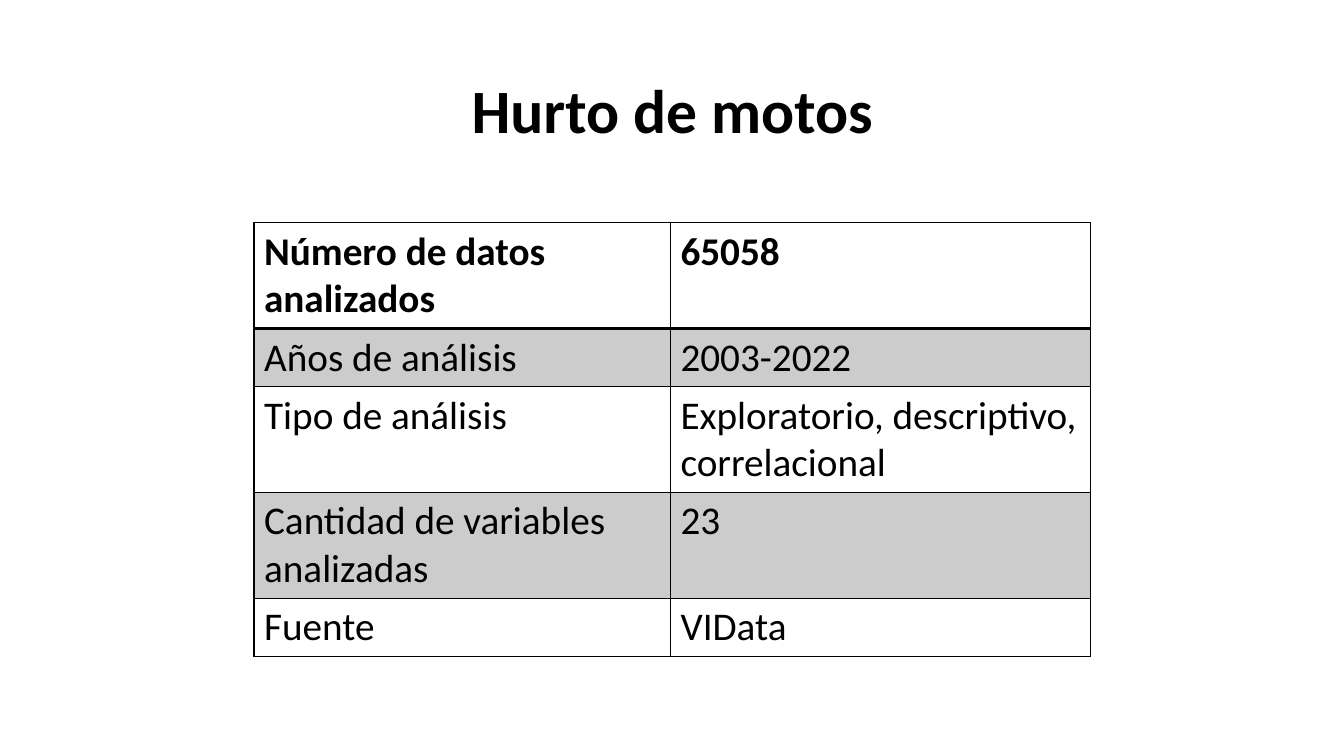
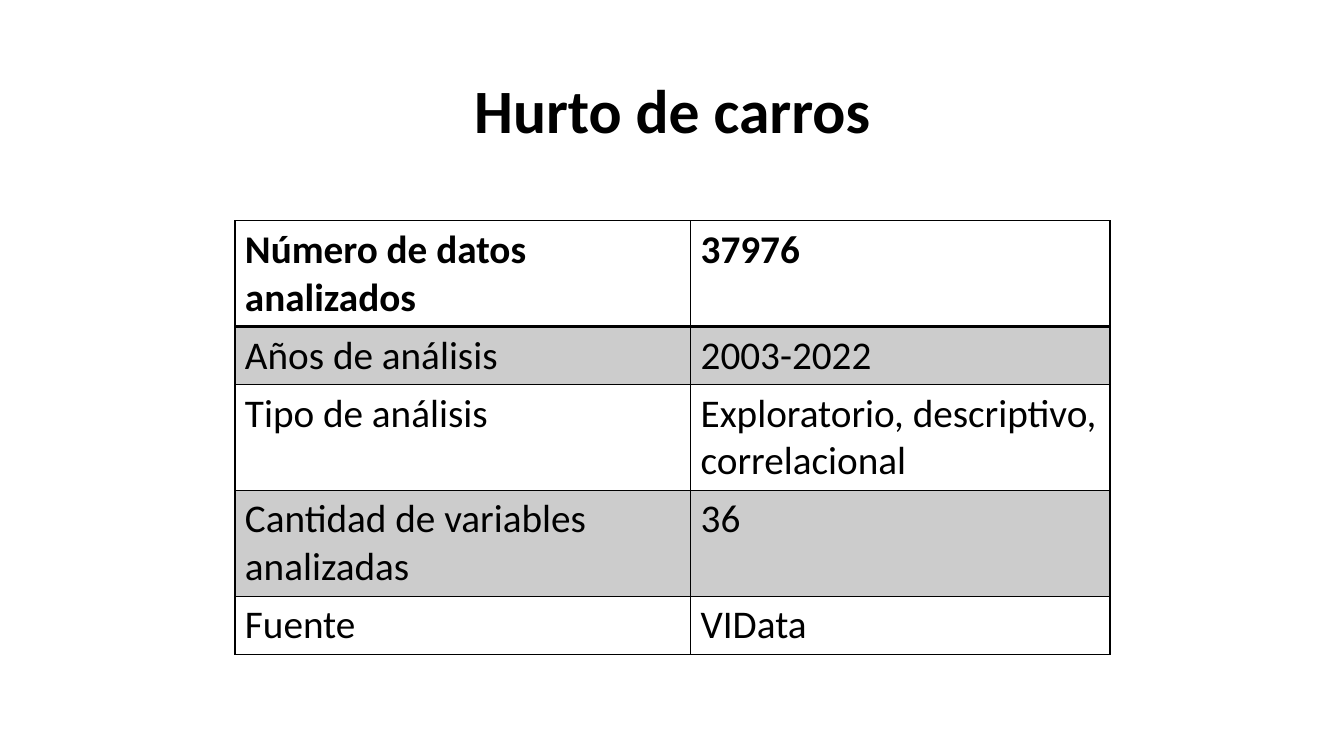
from lxml.etree import SubElement
from pptx import Presentation
from pptx.dml.color import RGBColor
from pptx.enum.text import MSO_ANCHOR, PP_ALIGN
from pptx.oxml.ns import qn
from pptx.util import Inches, Pt

FONT = "Calibri"
BLACK, WHITE, BAND = "000000", "FFFFFF", "CCCCCC"
TITLE_BOX = (0.92, 0.4, 11.5, 1.45)
LINE_HEIGHT, CELL_PADDING = 0.475, 0.1
LABELS = [
    ("Número de datos analizados", 2),
    ("Años de análisis", 1),
    ("Tipo de análisis", 2),
    ("Cantidad de variables analizadas", 2),
    ("Fuente", 1),
]
THEFTS = [
    ("Hurto de motos", "65058", "23", (2.52, 2.21), (4.13, 4.17)),
    ("Hurto de carros", "37976", "36", (2.33, 2.19), (4.52, 4.16)),
]


def color(value):
    return RGBColor.from_string(value)


def style_text(frame, size, bold):
    for para in frame.paragraphs:
        for span in para.runs:
            span.font.name = FONT
            span.font.size = Pt(size)
            span.font.bold = bold
            span.font.color.rgb = color(BLACK)


def set_borders(cell, widths):
    properties = cell._tc.get_or_add_tcPr()
    for side, width in zip("LRTB", widths):
        line = SubElement(properties, qn(f"a:ln{side}"), w=str(Pt(width)))
        fill = SubElement(line, qn("a:solidFill"))
        SubElement(fill, qn("a:srgbClr"), val=BLACK)


def fill_cell(cell, text, row):
    cell.text_frame.text = text
    cell.vertical_anchor = MSO_ANCHOR.TOP
    style_text(cell.text_frame, 28, row == 0)
    set_borders(cell, (1, 1, 2 if row == 1 else 1, 2 if row == 0 else 1))
    cell.fill.solid()
    cell.fill.fore_color.rgb = color(BAND if row % 2 else WHITE)


def add_title(page, text, box):
    title = page.shapes.title
    title.left, title.top, title.width, title.height = map(Inches, box)
    frame = title.text_frame
    frame.text = text
    frame.vertical_anchor = MSO_ANCHOR.MIDDLE
    frame.paragraphs[0].alignment = PP_ALIGN.CENTER
    frame.paragraphs[0].line_spacing = 0.9
    style_text(frame, 44, True)


def add_summary(page, values, corner, widths):
    heights = [lines * LINE_HEIGHT + CELL_PADDING for _, lines in LABELS]
    box = (*corner, sum(widths), sum(heights))
    table = page.shapes.add_table(len(LABELS), 2, *map(Inches, box)).table
    table.horz_banding = False
    for column, width in zip(table.columns, widths):
        column.width = Inches(width)
    for row, ((label, _), value, height) in enumerate(zip(LABELS, values, heights)):
        table.rows[row].height = Inches(height)
        fill_cell(table.cell(row, 0), label, row)
        fill_cell(table.cell(row, 1), value, row)


def add_theft_slide(deck, title, records, variables, corner, widths):
    page = deck.slides.add_slide(deck.slide_layouts[5])
    add_title(page, title, TITLE_BOX)
    values = (
        records,
        "2003-2022",
        "Exploratorio, descriptivo, correlacional",
        variables,
        "VIData",
    )
    add_summary(page, values, corner, widths)


def main():
    deck = Presentation()
    deck.slide_width, deck.slide_height = Inches(13.33), Inches(7.5)
    for theft in THEFTS:
        add_theft_slide(deck, *theft)
    deck.save("out.pptx")


if __name__ == "__main__":
    main()
